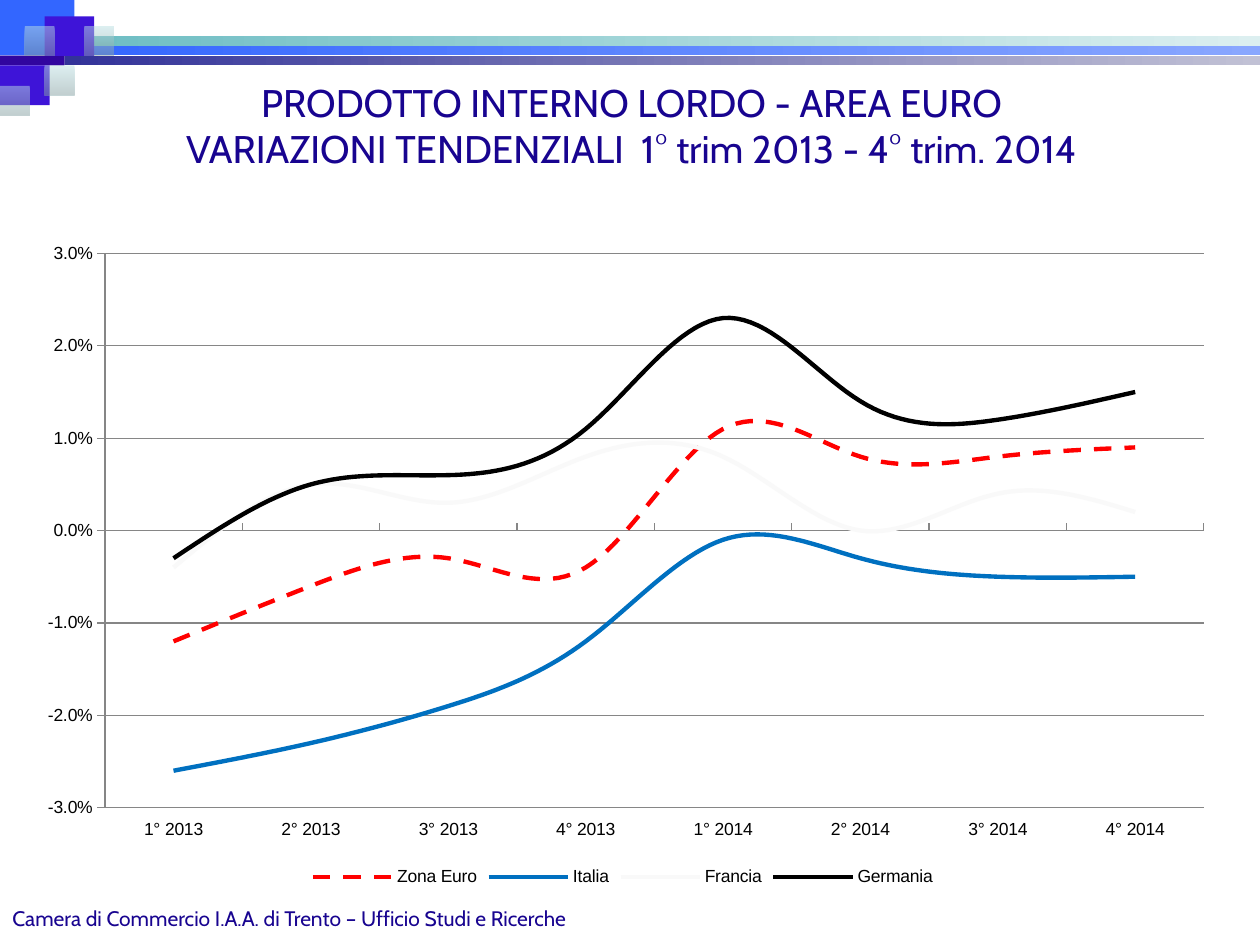
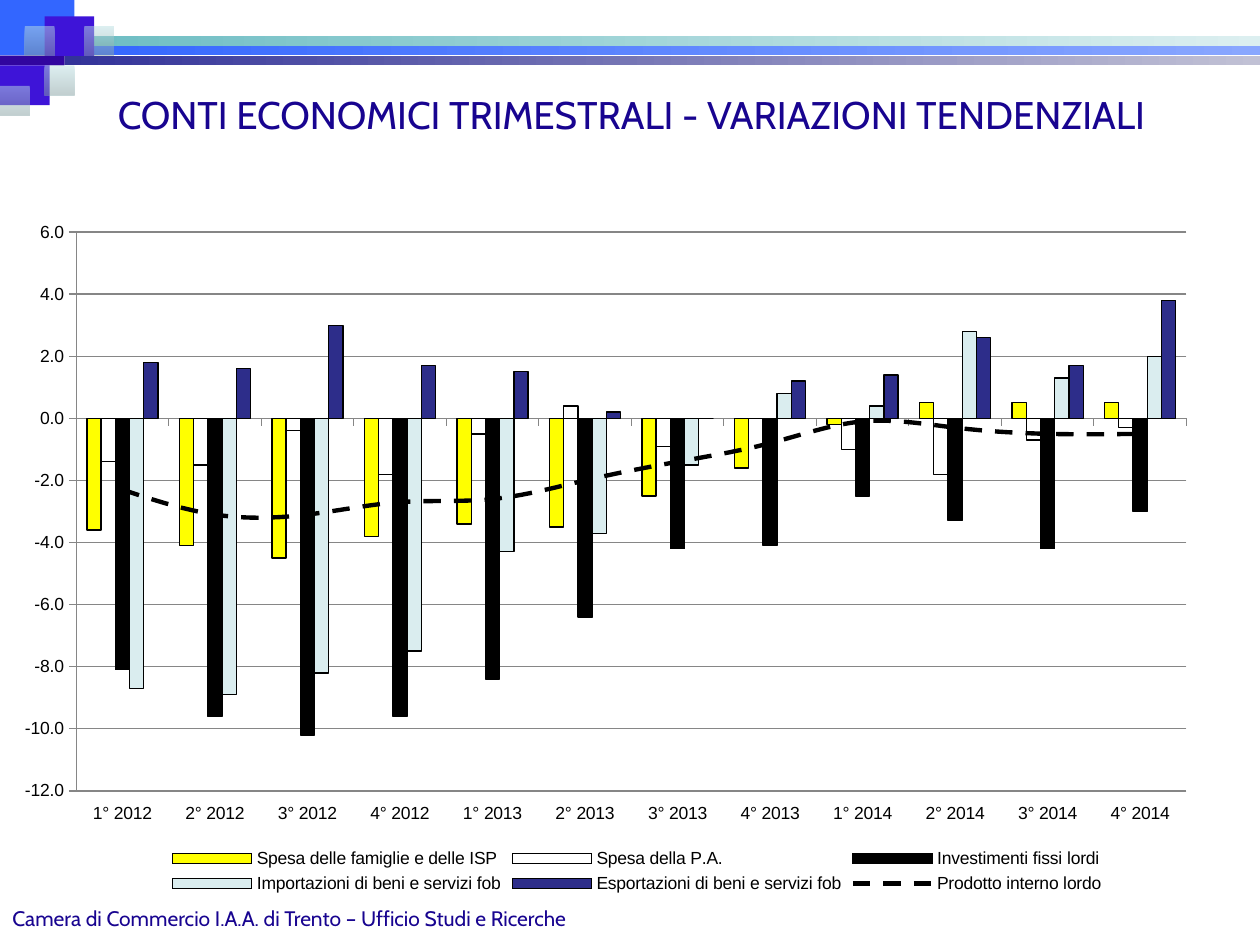
"""Build two slides with quarterly economic charts sharing one banded design."""
from copy import deepcopy
from dataclasses import dataclass

from lxml import etree
from pptx import Presentation
from pptx import util as u
from pptx.chart import data
from pptx.dml import color
from pptx.enum import chart as charts
from pptx.enum import dml, shapes, text
from pptx.oxml import ns


@dataclass(frozen=True)
class Theme:
    ink: str = "180490"
    black: str = "000000"
    grid: str = "868686"
    blue: str = "3366FF"
    violet: str = "3E14D8"
    indigo: str = "31059F"
    navy_fade: tuple = ("333399", "C1C1D5")
    blue_fade: tuple = ("3366FF", "89A7FF")
    teal_fade: tuple = ("6DBDC3", "DCEFF0")
    glass_fade: tuple = ("BBE0E3", "86A0A2")
    red: str = "FF0000"
    azure: str = "0070C0"
    pale: str = "F9F9F9"
    yellow: str = "FFFF00"
    white: str = "FFFFFF"
    ice: str = "DAEDEF"
    navy: str = "2D2D8A"
    text_font: str = "Cabin"
    chart_font: str = "Arial"
    title_size: float = 22
    footer_size: float = 12
    chart_size: float = 10
    curve_width: float = 2.5
    thin_width: float = 0.75


theme = Theme()
rgb = color.RGBColor.from_string


def set_values(target, values):
    for name, value in values.items():
        setattr(target, name, value)


def add_text(slide, box, words, size, frame_values, alignment):
    shape = slide.shapes.add_textbox(*map(u.Cm, box))
    set_values(shape.text_frame, {"word_wrap": True, **frame_values})
    paragraph = shape.text_frame.paragraphs[0]
    paragraph.text = words
    paragraph.alignment = alignment
    for run in paragraph.runs:
        set_values(run.font, {"name": theme.text_font, "size": u.Pt(size)})
        run.font.color.rgb = rgb(theme.ink)


page_width, page_height = 25.4, 19.05
band_top, band_height = 0.72, 0.2
navy_top = band_top + 2 * band_height
glass = 0.6

solid_blocks = [
    ((0, navy_top, 1.3, band_height), theme.indigo),
    ((0.9, 0.33, 1, 0.8), theme.violet),
    ((0, 1.32, 1, 0.8), theme.violet),
]
bands = [
    ((left, band_top + row * band_height, page_width - left, band_height), fade)
    for row, left, fade in [
        (2, 1.3, theme.navy_fade),
        (1, 1.1, theme.blue_fade),
        (0, 1.5, theme.teal_fade),
    ]
]
glass_squares = [
    ((left, top, glass, glass), theme.glass_fade)
    for left, top in [(0.5, 0.53), (0.9, 1.32), (1.7, 0.53), (0, 1.73)]
]
decorations = [((0, 0, 1.5, navy_top), theme.blue), *bands, *solid_blocks, *glass_squares]

pages = [
    {
        "title": "PRODOTTO INTERNO LORDO - AREA EURO\v"
                 "VARIAZIONI TENDENZIALI  1° trim 2013 - 4° trim. 2014",
        "title_top": 1.35,
        "chart_box": (0.3, 2.13, 24.51, 15.85),
        "plot_box": (0.074, 0.188, 0.904, 0.705),
        "type": charts.XL_CHART_TYPE.LINE,
        "years": (2013, 2014),
        "format": "0.0%",
        "scale": {"minimum_scale": -0.03, "maximum_scale": 0.03, "major_unit": 0.01},
        "category_tick": charts.XL_TICK_MARK.INSIDE,
        "dashed": "Zona Euro",
        "series": [
            ("Zona Euro", theme.red,
             (-0.012, -0.006, -0.003, -0.004, 0.011, 0.008, 0.008, 0.009)),
            ("Italia", theme.azure,
             (-0.026, -0.023, -0.019, -0.012, -0.001, -0.003, -0.005, -0.005)),
            ("Francia", theme.pale,
             (-0.004, 0.005, 0.003, 0.008, 0.008, 0, 0.004, 0.002)),
            ("Germania", theme.black,
             (-0.003, 0.005, 0.006, 0.011, 0.023, 0.014, 0.012, 0.015)),
        ],
    },
    {
        "title": "CONTI ECONOMICI TRIMESTRALI - VARIAZIONI TENDENZIALI",
        "title_top": 1.12,
        "chart_box": (0.28, 4.32, 25.12, 13.79),
        "plot_box": (0.05, 0.026, 0.891, 0.817),
        "type": charts.XL_CHART_TYPE.COLUMN_CLUSTERED,
        "years": (2012, 2013, 2014),
        "format": "0.0",
        "scale": {"minimum_scale": -12, "maximum_scale": 6, "major_unit": 2},
        "category_tick": charts.XL_TICK_MARK.OUTSIDE,
        "dashed": "Prodotto interno lordo",
        "series": [
            ("Spesa delle famiglie e delle ISP", theme.yellow,
             (-3.6, -4.1, -4.5, -3.8, -3.4, -3.5, -2.5, -1.6, -0.2, 0.5, 0.5, 0.5)),
            ("Spesa della P.A.", theme.white,
             (-1.4, -1.5, -0.4, -1.8, -0.5, 0.4, -0.9, 0, -1, -1.8, -0.7, -0.3)),
            ("Investimenti fissi lordi", theme.black,
             (-8.1, -9.6, -10.2, -9.6, -8.4, -6.4, -4.2, -4.1, -2.5, -3.3, -4.2, -3)),
            ("Importazioni di beni e servizi fob", theme.ice,
             (-8.7, -8.9, -8.2, -7.5, -4.3, -3.7, -1.5, 0.8, 0.4, 2.8, 1.3, 2)),
            ("Esportazioni di beni e servizi fob", theme.navy,
             (1.8, 1.6, 3, 1.7, 1.5, 0.2, 0, 1.2, 1.4, 2.6, 1.7, 3.8)),
            ("Prodotto interno lordo", theme.black,
             (-2.3, -3.1, -3.1, -2.7, -2.6, -2, -1.4, -0.8, -0.1, -0.3, -0.5, -0.5)),
        ],
    },
]

presentation = Presentation()
set_values(presentation, {"slide_width": u.Cm(page_width), "slide_height": u.Cm(page_height)})

for page in pages:
    slide = presentation.slides.add_slide(presentation.slide_layouts[6])

    for box, paint in decorations:
        shape = slide.shapes.add_shape(shapes.MSO_SHAPE.RECTANGLE, *map(u.Cm, box))
        shape.shadow.inherit = False
        shape.line.fill.background()
        if isinstance(paint, str):
            shape.fill.solid()
            shape.fill.fore_color.rgb = rgb(paint)
            continue
        is_glass = paint == theme.glass_fade
        shape.fill.gradient()
        shape.fill.gradient_angle = 270 if is_glass else 0
        for stop, stop_color in zip(shape.fill.gradient_stops, paint):
            stop.color.rgb = rgb(stop_color)
        if is_glass:
            for stop_element in shape.element.iter(ns.qn("a:srgbClr")):
                etree.SubElement(stop_element, ns.qn("a:alpha"), val="50000")

    add_text(slide, (1.3, page["title_top"], 22.86, 2.36), page["title"], theme.title_size,
             {"vertical_anchor": text.MSO_ANCHOR.MIDDLE}, text.PP_ALIGN.CENTER)
    add_text(slide, (0, 18.14, 13.41, 0.91),
             "Camera di Commercio I.A.A. di Trento – Ufficio Studi e Ricerche",
             theme.footer_size, {"vertical_anchor": text.MSO_ANCHOR.TOP}, text.PP_ALIGN.LEFT)

    chart_data = data.CategoryChartData(number_format=page["format"])
    chart_data.categories = [f"{quarter}° {year}" for year in page["years"]
                             for quarter in range(1, 5)]
    for name, _, values in page["series"]:
        chart_data.add_series(name, values)
    chart = slide.shapes.add_chart(
        page["type"], *map(u.Cm, page["chart_box"]), chart_data).chart
    set_values(chart, {"has_title": False, "has_legend": True})
    set_values(chart.font, {"name": theme.chart_font, "size": u.Pt(theme.chart_size)})
    chart.font.color.rgb = rgb(theme.black)
    set_values(chart.legend, {"position": charts.XL_LEGEND_POSITION.BOTTOM,
                              "include_in_layout": False})

    plot_area = chart.element.find(".//" + ns.qn("c:plotArea"))
    for old_layout in plot_area.findall(ns.qn("c:layout")):
        plot_area.remove(old_layout)
    layout = etree.SubElement(plot_area, ns.qn("c:layout"))
    plot_area.insert(0, layout)
    manual = etree.SubElement(layout, ns.qn("c:manualLayout"))
    settings = {"layoutTarget": "inner", "xMode": "edge", "yMode": "edge",
                **dict(zip("xywh", page["plot_box"]))}
    for tag, value in settings.items():
        etree.SubElement(manual, ns.qn(f"c:{tag}"), val=str(value))

    if page["type"] == charts.XL_CHART_TYPE.COLUMN_CLUSTERED:
        set_values(chart.plots[0], {"gap_width": 150, "overlap": 0})
        bar_chart = plot_area.find(ns.qn("c:barChart"))
        curve = bar_chart.findall(ns.qn("c:ser"))[-1]
        for flag in curve.findall(ns.qn("c:invertIfNegative")):
            curve.remove(flag)
        line_chart = etree.SubElement(plot_area, ns.qn("c:lineChart"))
        bar_chart.addnext(line_chart)
        etree.SubElement(line_chart, ns.qn("c:grouping"), val="standard")
        etree.SubElement(line_chart, ns.qn("c:varyColors"), val="0")
        line_chart.append(curve)
        etree.SubElement(line_chart, ns.qn("c:marker"), val="1")
        for axis_id in bar_chart.findall(ns.qn("c:axId")):
            line_chart.append(deepcopy(axis_id))

    paints = {name: paint for name, paint, _ in page["series"]}
    for plot in chart.plots:
        plot.vary_by_categories = False
        for series in plot.series:
            line = series.format.line
            if hasattr(series, "smooth"):
                series.smooth = True
                series.marker.style = charts.XL_MARKER_STYLE.NONE
                line.color.rgb = rgb(paints[series.name])
                line.width = u.Pt(theme.curve_width)
            else:
                series.invert_if_negative = False
                series.format.fill.solid()
                series.format.fill.fore_color.rgb = rgb(paints[series.name])
                line.color.rgb = rgb(theme.black)
                line.width = u.Pt(theme.thin_width)
            if series.name == page["dashed"]:
                line.dash_style = dml.MSO_LINE.DASH

    set_values(chart.category_axis, {
        "tick_label_position": charts.XL_TICK_LABEL_POSITION.LOW,
        "major_tick_mark": page["category_tick"],
        "minor_tick_mark": charts.XL_TICK_MARK.NONE,
        "has_major_gridlines": False,
    })
    set_values(chart.value_axis, {
        **page["scale"],
        "major_tick_mark": charts.XL_TICK_MARK.OUTSIDE,
        "minor_tick_mark": charts.XL_TICK_MARK.NONE,
        "has_major_gridlines": True,
    })
    set_values(chart.value_axis.tick_labels, {"number_format": page["format"],
                                              "number_format_is_linked": False})
    for part in (chart.category_axis, chart.value_axis, chart.value_axis.major_gridlines):
        part.format.line.color.rgb = rgb(theme.grid)
        part.format.line.width = u.Pt(theme.thin_width)

presentation.save("out.pptx")
